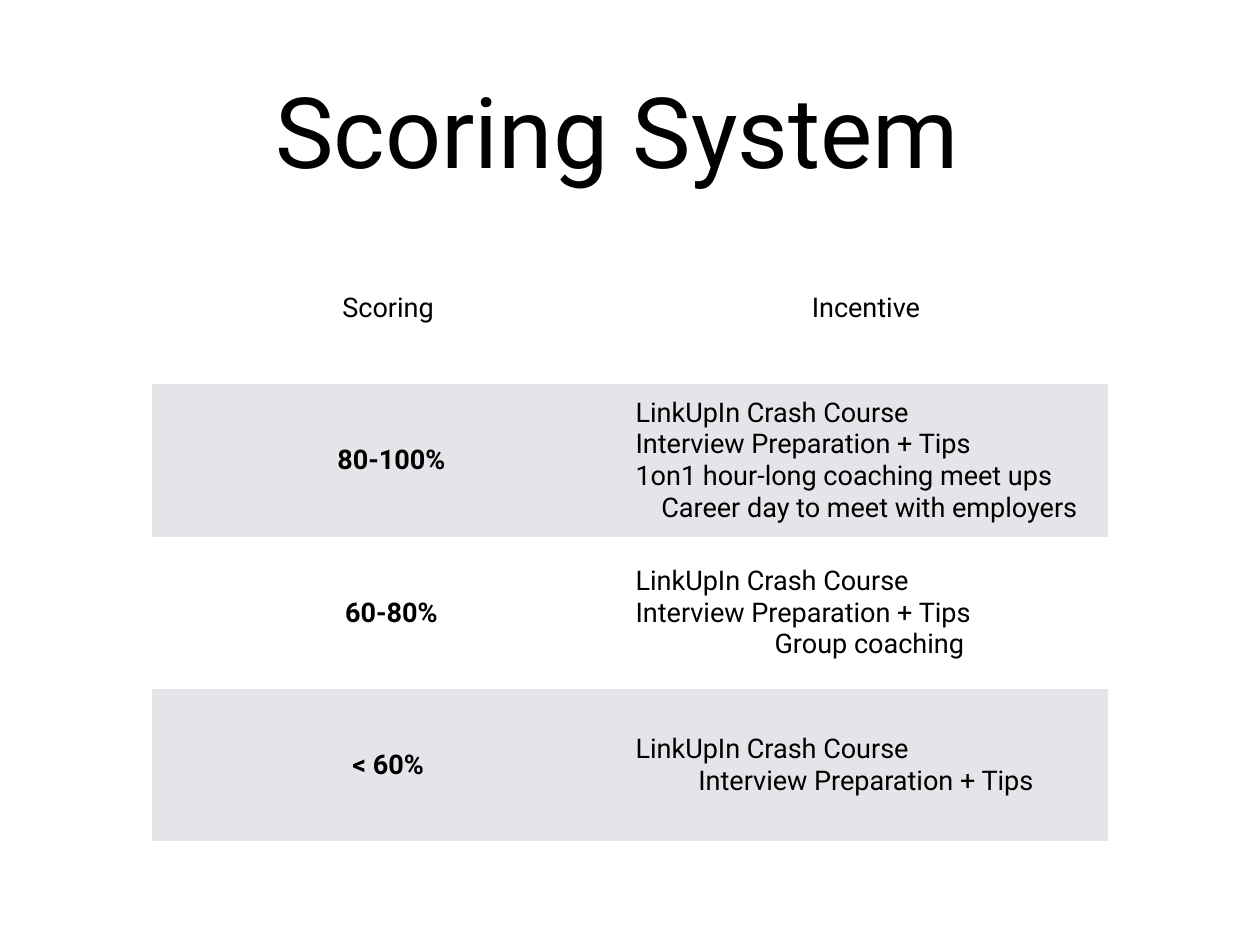
from pptx import Presentation
from pptx.dml.color import RGBColor
from pptx.enum.text import MSO_ANCHOR as Anchor, MSO_AUTO_SIZE as AutoSize, PP_ALIGN as Align
from pptx.oxml.ns import qn
from pptx.util import Cm, Pt

COLORS = {"text": "000000", "plain": "FFFFFF", "band": "E3E5E8"}
FONT = "Roboto"
INSET = Cm(0.15)
MARGINS = {f"margin_{side}": INSET for side in ("left", "top", "right", "bottom")}
NO_STYLE_NO_GRID = "{2D5ABB26-0587-4C30-8999-92F81FD0307C}"
TITLE_ONLY = 5

HEADERS = ("Scoring ", "Incentive ")
SCORES = [
    ("80-100%", ["LinkUpIn Crash Course", "Interview Preparation + Tips",
                 "1on1 hour-long coaching meet ups", "Career day to meet with employers"]),
    ("60-80%", ["LinkUpIn Crash Course", "Interview Preparation + Tips", "Group coaching"]),
    ("< 60% ", ["LinkUpIn Crash Course", "Interview Preparation + Tips "]),
]


def set_attributes(target, values):
    for name, value in values.items():
        setattr(target, name, value)


def write_lines(frame, lines, size, bold=False):
    """Write one paragraph per line: the last is centred, those above it start at the left."""
    for number, line in enumerate(lines):
        para = frame.add_paragraph() if number else frame.paragraphs[0]
        para.alignment = Align.CENTER if line is lines[-1] else Align.LEFT
        span = para.add_run()
        span.text = line
        set_attributes(span.font, {"name": FONT, "size": Pt(size), "bold": bold})
        span.font.color.rgb = RGBColor.from_string(COLORS["text"])


def add_title(page, text):
    box = page.shapes.title
    set_attributes(box, {"left": Cm(2.64), "top": Cm(0.71), "width": Cm(30.84), "height": Cm(6)})
    set_attributes(box.text_frame, {**MARGINS, "vertical_anchor": Anchor.MIDDLE,
                                    "word_wrap": True, "auto_size": AutoSize.NONE})
    write_lines(box.text_frame, [text], 80)


def fill_cell(cell, lines, color, bold=False):
    set_attributes(cell, {**MARGINS, "vertical_anchor": Anchor.MIDDLE})
    cell.fill.solid()
    cell.fill.fore_color.rgb = RGBColor.from_string(COLORS[color])
    write_lines(cell.text_frame, lines, 22, bold)


def add_score_table(page):
    row_count = len(SCORES) + 1
    table = page.shapes.add_table(row_count, len(HEADERS), Cm(4.37), Cm(6.65),
                                  Cm(27.4), Cm(4.37) * row_count).table
    set_attributes(table, {"first_row": False, "horz_banding": False})
    table._tbl.tblPr.find(qn("a:tableStyleId")).text = NO_STYLE_NO_GRID
    for column, header in enumerate(HEADERS):
        fill_cell(table.cell(0, column), [header], "plain")
    for row, (score, incentives) in enumerate(SCORES, start=1):
        color = "band" if row % 2 else "plain"
        fill_cell(table.cell(row, 0), [score], color, bold=True)
        fill_cell(table.cell(row, 1), incentives, color)


def main():
    deck = Presentation()
    set_attributes(deck, {"slide_width": Cm(36.12), "slide_height": Cm(27.1)})
    page = deck.slides.add_slide(deck.slide_layouts[TITLE_ONLY])
    page.background.fill.solid()
    page.background.fill.fore_color.rgb = RGBColor.from_string(COLORS["plain"])
    add_title(page, "Scoring System ")
    add_score_table(page)
    deck.save("out.pptx")


if __name__ == "__main__":
    main()
